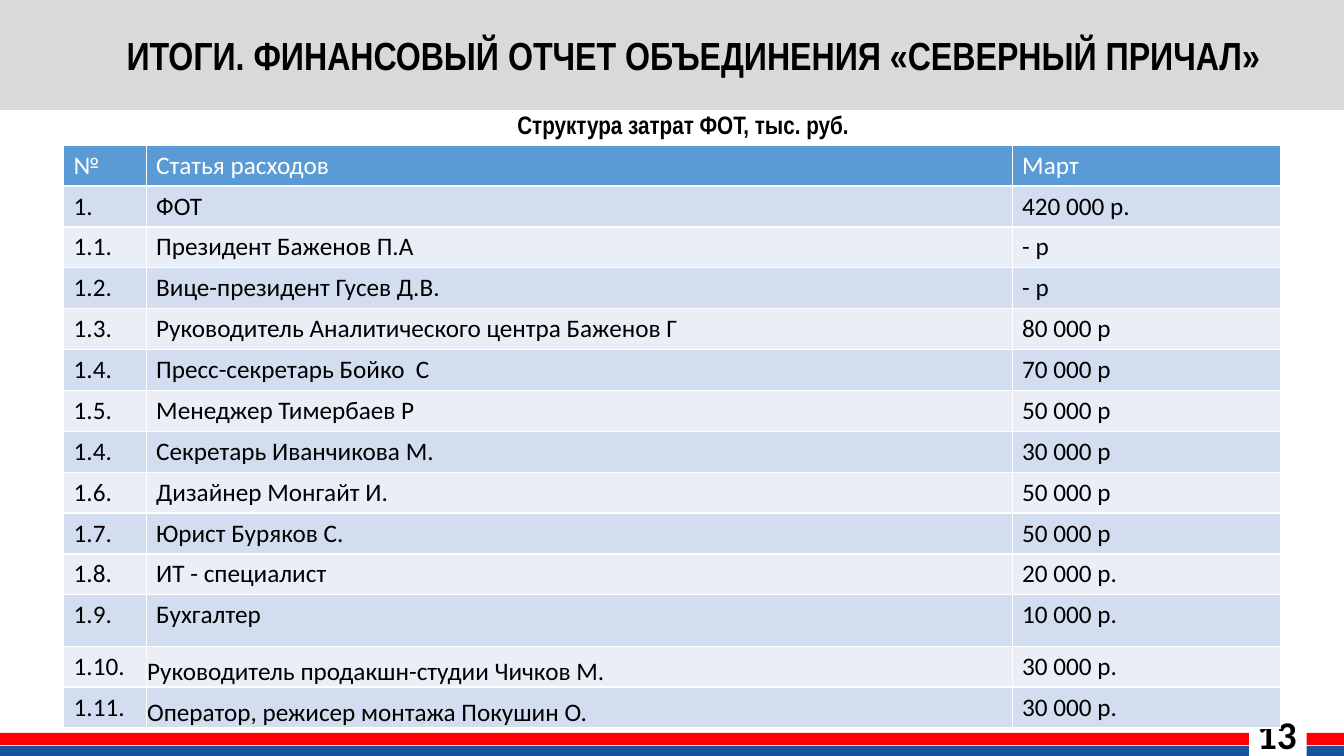
from lxml.etree import SubElement
from pptx import Presentation
from pptx.dml.color import RGBColor
from pptx.enum.shapes import MSO_SHAPE
from pptx.enum.text import MSO_ANCHOR, MSO_AUTO_SIZE, PP_ALIGN
from pptx.oxml.ns import qn
from pptx.util import Inches, Pt

HEAD = "ИТОГИ. ФИНАНСОВЫЙ ОТЧЕТ ОБЪЕДИНЕНИЯ «СЕВЕРНЫЙ ПРИЧАЛ»"
TITLE = "Структура затрат ФОТ, тыс. руб."
PAGE = "13"
ROWS = [
    ("№", "Статья расходов", "Март"),
    ("1.", "ФОТ", "420 000 р."),
    ("1.1.", "Президент Баженов П.А", "- р"),
    ("1.2.", "Вице-президент Гусев Д.В.", "- р"),
    ("1.3.", "Руководитель Аналитического центра Баженов Г", "80 000 р"),
    ("1.4.", "Пресс-секретарь Бойко  С", "70 000 р"),
    ("1.5.", "Менеджер Тимербаев Р", "50 000 р"),
    ("1.4.", "Секретарь Иванчикова М.", "30 000 р"),
    ("1.6.", "Дизайнер Монгайт И.", "50 000 р"),
    ("1.7.", "Юрист Буряков С.", "50 000 р"),
    ("1.8.", "ИТ - специалист", "20 000 р."),
    ("1.9.", "Бухгалтер", "10 000 р."),
    ("1.10.", "Руководитель продакшн-студии Чичков М.", "30 000 р."),
    ("1.11.", "Оператор, режисер монтажа Покушин О.", "30 000 р."),
]
COLS = (6.79, 71.16, 22.05)
LOW, TALL = 5.2, 6.8
TIGHT = len(ROWS) - 2
INK = {
    "gray": "D9D9D9", "blue": "1A529D", "red": "FF0000", "white": "FFFFFF",
    "black": "000000", "top": "5B9BD5", "odd": "D2DEEF", "even": "EAEFF7",
}
BARS = [
    ("gray", (0, 0, 100, 14.53)),
    ("blue", (0, 98.67, 100, 1.33)),
    ("red", (0, 96.93, 100, 1.6)),
    ("white", (92.95, 94, 4.28, 6)),
]

deck = Presentation()
deck.slide_width, deck.slide_height = Inches(13.33), Inches(7.5)
slide = deck.slides.add_slide(deck.slide_layouts[5])
shapes = slide.shapes


def wide(share):
    return int(deck.slide_width * share / 100)


def high(share):
    return int(deck.slide_height * share / 100)


def place(x, y, w, h):
    return wide(x), high(y), wide(w), high(h)


def tint(ink):
    return RGBColor.from_string(INK[ink])


def write(frame, text, size, face, bold=False, ink="black"):
    frame.text = text
    font = frame.paragraphs[0].runs[0].font
    font.size, font.name, font.bold = Pt(size), face, bold
    font.color.rgb = tint(ink)


def center(frame):
    frame.word_wrap = True
    frame.auto_size = MSO_AUTO_SIZE.NONE
    frame.vertical_anchor = MSO_ANCHOR.MIDDLE
    frame.paragraphs[0].alignment = PP_ALIGN.CENTER
    frame.paragraphs[0].line_spacing = 0.9


def edge(cell):
    props = cell._tc.get_or_add_tcPr()
    for side in "LRTB":
        line = SubElement(props, qn("a:ln" + side), w=str(Pt(1)))
        fill = SubElement(line, qn("a:solidFill"))
        SubElement(fill, qn("a:srgbClr"), val=INK["white"])


for ink, box in BARS:
    bar = shapes.add_shape(MSO_SHAPE.RECTANGLE, *place(*box))
    bar.shadow.inherit = False
    bar.fill.solid()
    bar.fill.fore_color.rgb = tint(ink)
    bar.line.fill.background()

page = shapes.add_textbox(*place(92.8, 93.33, 4.5, 6.67)).text_frame
page.word_wrap = False
write(page, PAGE, 28, "Calibri", True)

title = shapes.title
title.left, title.top, title.width, title.height = place(0.83, 12.8, 100, 7.73)
shapes._spTree.append(title._element)
head = shapes.add_textbox(*place(1.58, 1.2, 100, 12.93))
for shape, text, size in ((title, TITLE, 18), (head, HEAD, 28)):
    write(shape.text_frame, text, size, "Arial Narrow", True)
    center(shape.text_frame)

span = 90.55
box = place(4.73, 19.2, span, LOW * (len(ROWS) - 1) + TALL)
table = shapes.add_table(len(ROWS), len(COLS), *box).table
for col, share in zip(table.columns, COLS):
    col.width = wide(span * share / 100)
for r, row in enumerate(ROWS):
    table.rows[r].height = high(TALL if r == TIGHT - 1 else LOW)
    for c, text in enumerate(row):
        cell = table.cell(r, c)
        write(cell.text_frame, text, 18, "Calibri", ink="black" if r else "white")
        if r >= TIGHT and c == 1:
            cell.vertical_anchor = MSO_ANCHOR.BOTTOM
            cell.margin_left = cell.margin_right = cell.margin_top = Inches(0.01)
            cell.margin_bottom = 0
        edge(cell)
        cell.fill.solid()
        cell.fill.fore_color.rgb = tint(("even", "odd")[r % 2] if r else "top")

deck.save("out.pptx")
